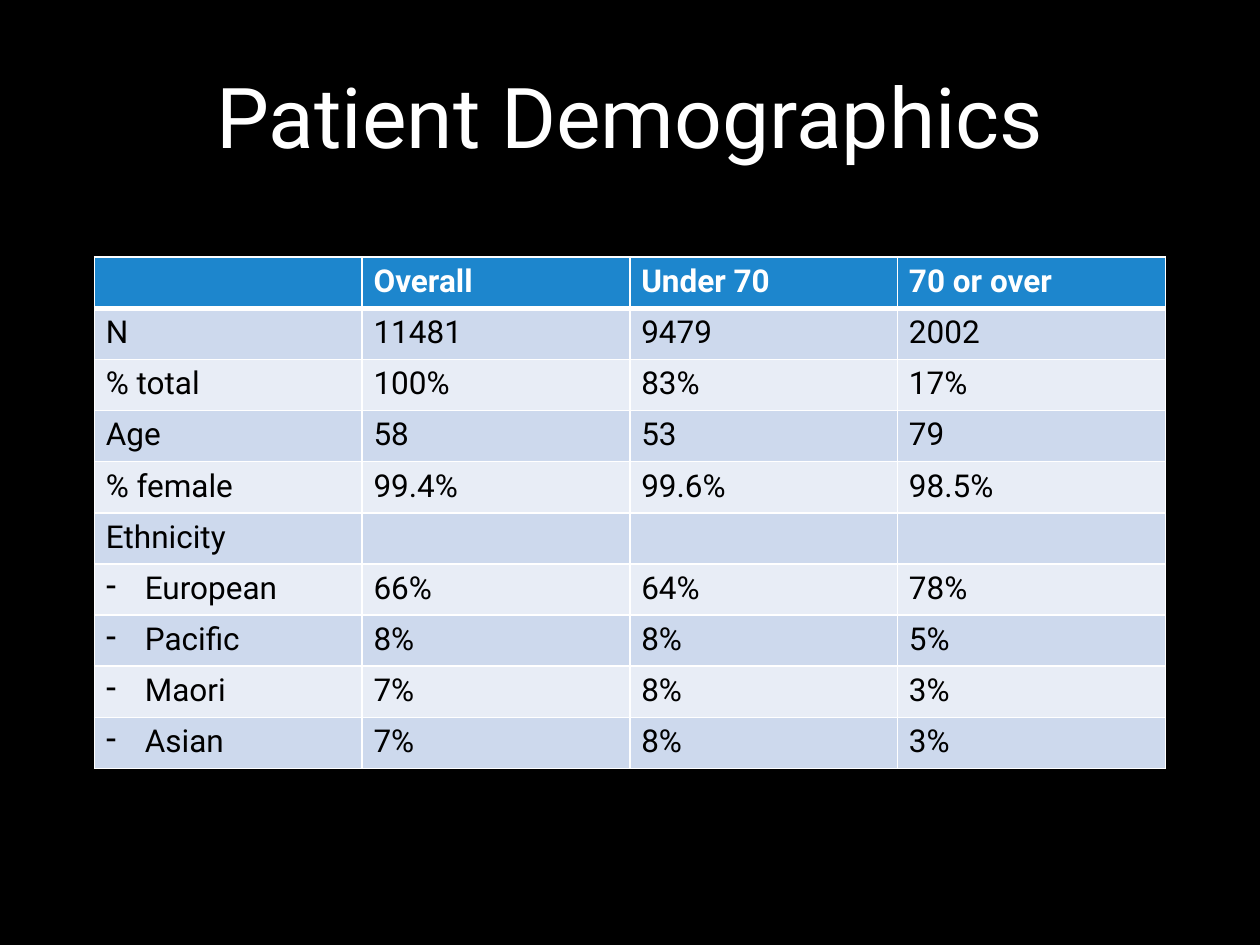
import pptx
import pptx.util
import pptx.dml.color
import pptx.enum.text
import pptx.oxml.ns
import lxml.etree

Inches = pptx.util.Inches
COLORS = {
    "background": "000000",
    "light_text": "FFFFFF",
    "dark_text": "000000",
    "header": "1D86CD",
    "odd_row": "CDD9ED",
    "even_row": "E8EDF6",
    "border": "FFFFFF",
}


def write_text(frame, text, *, size, color, bold=False, align=None, bullet=None):
    paragraph = frame.paragraphs[0]
    if bullet:
        properties = paragraph._p.get_or_add_pPr()
        properties.set("marL", str(Inches(0.31)))
        properties.set("indent", str(-Inches(0.31)))
        mark = lxml.etree.SubElement(properties, pptx.oxml.ns.qn("a:buChar"))
        mark.set("char", bullet)
    if align is not None:
        paragraph.alignment = align
    run = paragraph.add_run()
    run.text = text
    run.font.name = "Roboto"
    run.font.size = pptx.util.Pt(size)
    run.font.bold = bold
    run.font.color.rgb = pptx.dml.color.RGBColor.from_string(COLORS[color])


def add_border(cell, side, points):
    qn = pptx.oxml.ns.qn
    line = lxml.etree.SubElement(cell._tc.get_or_add_tcPr(), qn(f"a:ln{side}"))
    line.set("w", str(pptx.util.Pt(points)))
    fill = lxml.etree.SubElement(line, qn("a:solidFill"))
    lxml.etree.SubElement(fill, qn("a:srgbClr")).set("val", COLORS["border"])


presentation = pptx.Presentation()
presentation.slide_width = Inches(10)
presentation.slide_height = Inches(7.5)
slide = presentation.slides.add_slide(presentation.slide_layouts[6])
slide.background.fill.solid()
slide.background.fill.fore_color.rgb = pptx.dml.color.RGBColor.from_string(COLORS["background"])

title = slide.shapes.add_textbox(Inches(0.75), Inches(0.13), Inches(8.5), Inches(1.56)).text_frame
title.word_wrap = True
title.vertical_anchor = pptx.enum.text.MSO_ANCHOR.MIDDLE
write_text(title, "Patient Demographics", size=48, color="light_text",
           align=pptx.enum.text.PP_ALIGN.CENTER)

demographics = [
    ("", "Overall", "Under 70", "70 or over"),
    ("N", "11481", "9479", "2002"),
    ("% total", "100%", "83%", "17%"),
    ("Age", "58", "53", "79"),
    ("% female", "99.4%", "99.6%", "98.5%"),
    ("Ethnicity", "", "", ""),
    ("European", "66%", "64%", "78%"),
    ("Pacific", "8%", "8%", "5%"),
    ("Maori", "7%", "8%", "3%"),
    ("Asian", "7%", "8%", "3%"),
]
ethnicities = ("European", "Pacific", "Maori", "Asian")

patients = slide.shapes.add_table(
    len(demographics), len(demographics[0]),
    Inches(0.75), Inches(2.04), Inches(8.5), Inches(4.06)).table
for row in patients.rows:
    row.height = Inches(4.06 / len(demographics))

for row_index, values in enumerate(demographics):
    is_header = row_index == 0
    row_color = "header" if is_header else "odd_row" if row_index % 2 else "even_row"
    borders = {"L": 1, "R": 1, "T": 3 if row_index == 1 else 1, "B": 3 if is_header else 1}
    for column_index, value in enumerate(values):
        cell = patients.cell(row_index, column_index)
        cell.margin_left = cell.margin_right = Inches(0.09)
        cell.margin_top = cell.margin_bottom = Inches(0.05)
        for side, points in borders.items():
            add_border(cell, side, points)
        cell.fill.solid()
        cell.fill.fore_color.rgb = pptx.dml.color.RGBColor.from_string(COLORS[row_color])
        if value:
            write_text(cell.text_frame, value, size=18, bold=is_header,
                       color="light_text" if is_header else "dark_text",
                       bullet="-" if value in ethnicities else None)

presentation.save("out.pptx")
